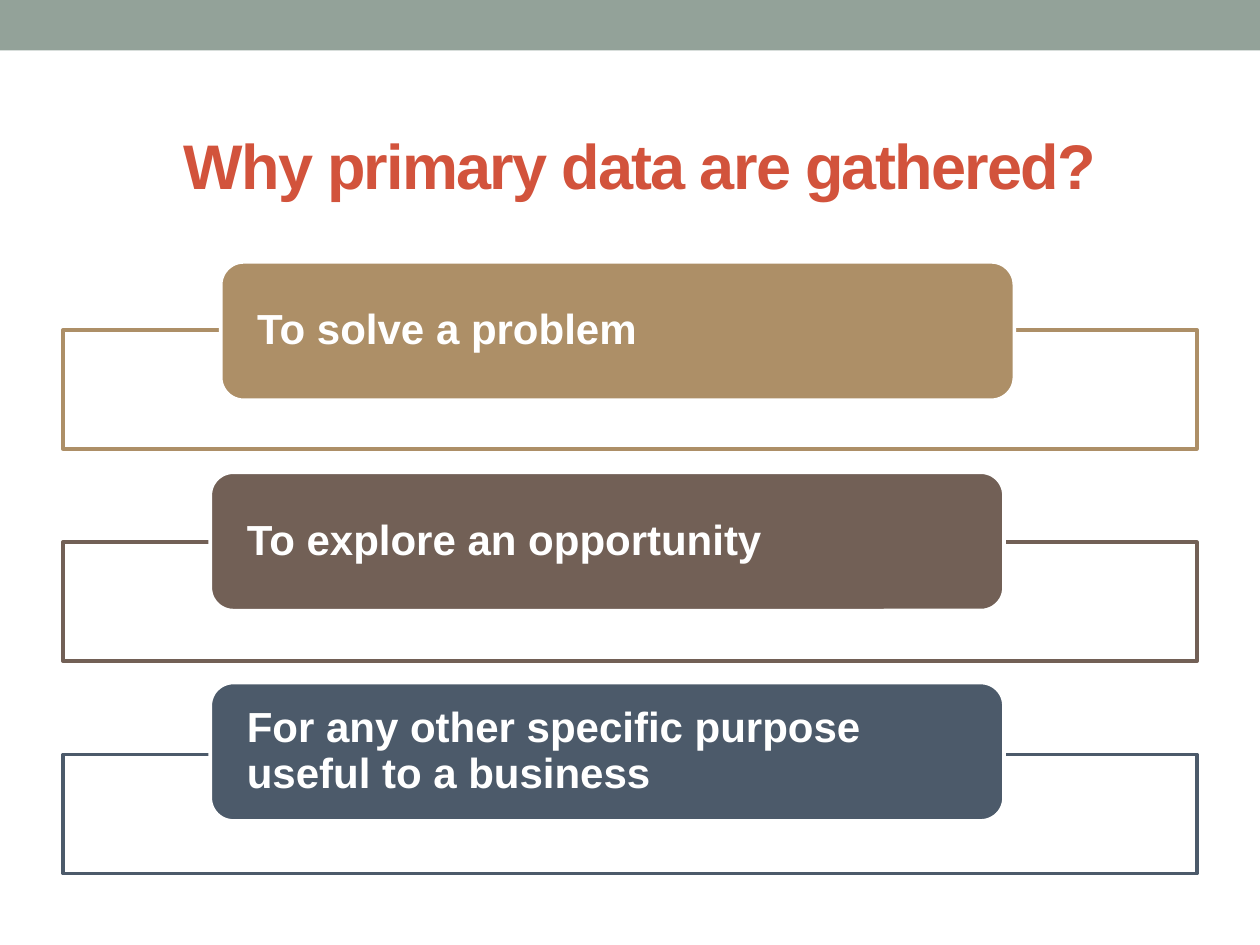
from dataclasses import dataclass

from lxml.etree import SubElement
from pptx import Presentation
from pptx.dml.color import RGBColor as RGB
from pptx.enum.shapes import MSO_SHAPE as SHAPE
from pptx.enum.text import MSO_ANCHOR as ANCHOR, PP_ALIGN as ALIGN
from pptx.oxml.ns import qn
from pptx.util import Cm, Pt


@dataclass(frozen=True)
class Theme:
    """Colours, font and sizes of the slide."""
    font: str = "Arial"
    white: str = "FFFFFF"
    bar: str = "93A299"
    title: str = "D2533C"
    accents: tuple = ("AD8F67", "726056", "4C5A6A")
    title_size: int = 36
    card_size: int = 24
    line: float = 2.08


class Builder:
    """Draws styled elements on the current slide."""

    def __init__(self, s, theme):
        """Keep the slide and its theme."""
        self.s, self.theme = s, theme

    def label(self, tf, text, size, color, align, **frame):
        """Fill a text frame with one bold paragraph and return its run."""
        tf.text = text
        p = tf.paragraphs[0]
        p.alignment = align
        r = p.runs[0]
        r.font.color.rgb = RGB.from_string(color)
        font = {"name": self.theme.font, "size": Pt(size), "bold": True}
        for obj, values in ((tf, {"word_wrap": True, "vertical_anchor": ANCHOR.MIDDLE, **frame}),
                            (r.font, font)):
            for name, value in values.items():
                setattr(obj, name, value)
        return r

    def shape(self, kind, box, fill, line=None):
        """Add a flat preset shape, outlined when a line colour is given."""
        sp = self.s.shapes.add_shape(kind, *map(Cm, box))
        sp.shadow.inherit = False
        sp.fill.solid()
        sp.fill.fore_color.rgb = RGB.from_string(fill)
        if line:
            sp.line.color.rgb = RGB.from_string(line)
            sp.line.width = Pt(self.theme.line)
        else:
            sp.line.fill.background()
        return sp

    def title(self, text, box):
        """Place and format the title placeholder."""
        sp = self.s.shapes.title
        for name, value in zip(("left", "top", "width", "height"), box):
            setattr(sp, name, Cm(value))
        r = self.label(sp.text_frame, text, self.theme.title_size, self.theme.title, ALIGN.CENTER)
        r._r.get_or_add_rPr().set("spc", "-100")

    def frame(self, box, color):
        """Add an outlined, slightly transparent white rectangle."""
        sp = self.shape(SHAPE.RECTANGLE, box, self.theme.white, color)
        clr = sp._element.spPr.find(qn("a:solidFill"))[0]
        SubElement(clr, qn("a:alpha"), val="90000")

    def card(self, text, box, color):
        """Add a rounded card with its label."""
        sp = self.shape(SHAPE.ROUNDED_RECTANGLE, box, color, self.theme.white)
        self.label(sp.text_frame, text, self.theme.card_size, self.theme.white, ALIGN.LEFT,
                   margin_left=Cm(0.6), margin_right=Cm(0.6), margin_top=0, margin_bottom=0)
        sp.text_frame.paragraphs[0].line_spacing = 0.9


def main():
    """Build and save the slide."""
    prs = Presentation()
    prs.slide_width, prs.slide_height = Cm(25.4), Cm(19.05)
    theme = Theme()
    b = Builder(prs.slides.add_slide(prs.slide_layouts[5]), theme)
    b.shape(SHAPE.RECTANGLE, (0, 0, 25.4, 1.02), theme.bar)
    b.title("Why primary data are gathered?", (1.47, 2.11, 22.86, 2.41))
    reasons = (
        ("To solve a problem", 4.45),
        ("To explore an opportunity", 4.24),
        ("For any other specific purpose useful to a business", 4.24),
    )
    for i, ((text, left), color) in enumerate(zip(reasons, theme.accents)):
        b.frame((1.27, 6.65 + 4.28 * i, 22.86, 2.4), color)
        b.card(text, (left, 5.28 + 4.24 * i, 16, 2.79), color)
    prs.save("out.pptx")


if __name__ == "__main__":
    main()
